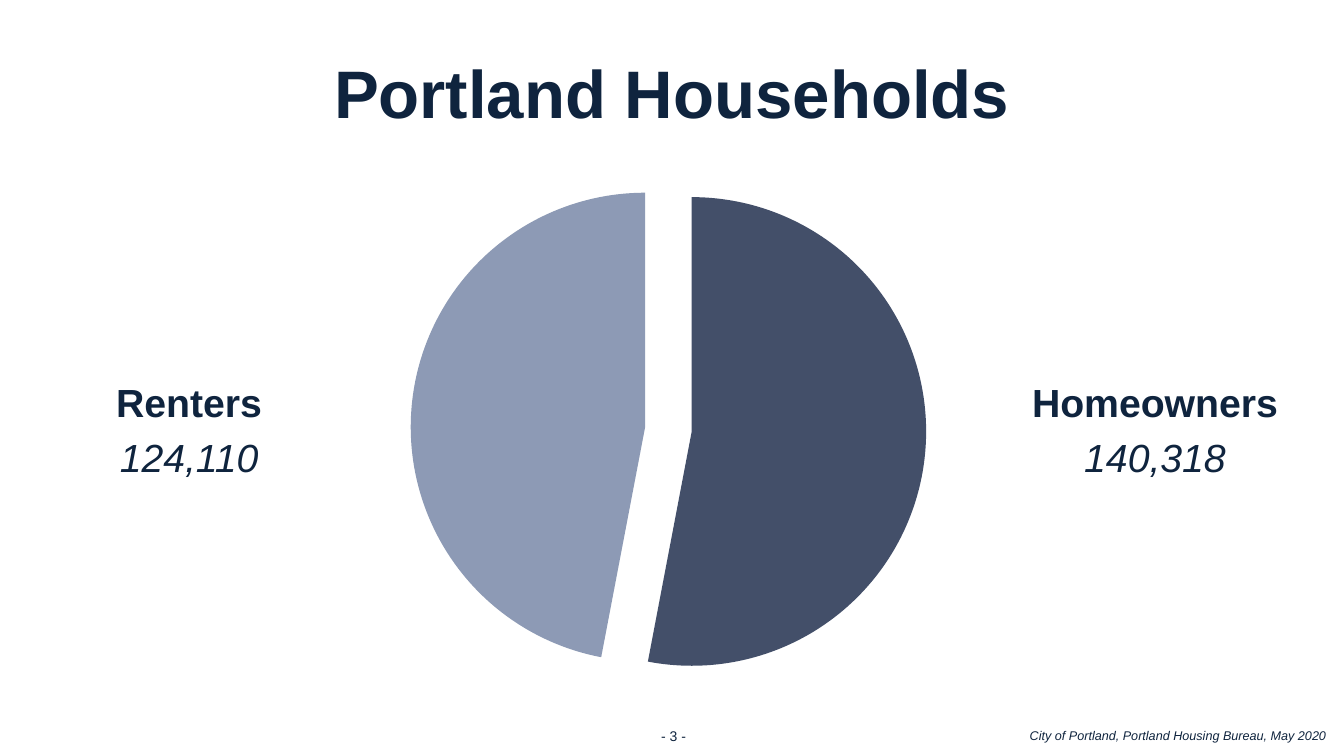
from lxml import etree
from pptx import Presentation
from pptx.chart.data import CategoryChartData
from pptx.dml.color import RGBColor
from pptx.enum import chart as ch, text as t
from pptx.oxml import parse_xml
from pptx.oxml.ns import nsdecls, qn
from pptx.util import Inches, Pt

NAVY = RGBColor(0x0F, 0x24, 0x3E)
SLATE = RGBColor(0x43, 0x4F, 0x69)
MIST = RGBColor(0x8D, 0x9A, 0xB5)
FONT = "Arial"

# Content
TITLE = "Portland Households"
SHARES = [("1", 53, SLATE), ("2", 47, MIST)]
GROUPS = [("Renters", "124,110", 0.42), ("Homeowners", "140,318", 10)]
PAGE = "- 3 -"
SOURCE = "City of Portland, Portland Housing Bureau, May 2020"

# Pie layout in inches
CHART_W, CHART_H = 8, 5
PIE_W = 4.65
EXPLOSION = 10

prs = Presentation()
prs.slide_width, prs.slide_height = Inches(13.33), Inches(7.5)
s = prs.slides.add_slide(prs.slide_layouts[5])


def write(sp, lines, size, align=t.PP_ALIGN.CENTER, styles=("",), after=0,
          inset=0, anchor=t.MSO_ANCHOR.TOP):
    """Fill a shape with one paragraph per line; styles hold b and i flags."""
    tf = sp.text_frame
    tf.word_wrap = True
    tf.auto_size = t.MSO_AUTO_SIZE.NONE
    tf.vertical_anchor = anchor
    tf.margin_left = tf.margin_right = Inches(inset)
    tf.margin_top = tf.margin_bottom = Inches(inset / 2)
    for i, (line, style) in enumerate(zip(lines, styles)):
        p = tf.add_paragraph() if i else tf.paragraphs[0]
        p.alignment = align
        p.space_after = Pt(after if i < len(lines) - 1 else 0)
        r = p.add_run()
        r.text = line
        f = r.font
        f.name, f.size = FONT, Pt(size)
        f.bold, f.italic = "b" in style, "i" in style
        f.color.rgb = NAVY


def box(x, y, w, h):
    return s.shapes.add_textbox(Inches(x), Inches(y), Inches(w), Inches(h))


# Title
title = s.shapes.title
title.left, title.top = Inches(0.75), Inches(0.5)
title.width, title.height = Inches(11.83), Inches(0.81)
write(title, [TITLE], 48, styles=("b",), anchor=t.MSO_ANCHOR.MIDDLE)

# Pie chart
data = CategoryChartData()
data.categories = [name for name, _, _ in SHARES]
data.add_series("Series 1", [value for _, value, _ in SHARES])
pie = s.shapes.add_chart(ch.XL_CHART_TYPE.PIE, Inches(2.67), Inches(1.76),
                         Inches(CHART_W), Inches(CHART_H), data).chart
pie.has_legend = pie.has_title = False
pie.font.name, pie.font.size, pie.font.bold = FONT, Pt(14), True
pie.plots[0].vary_by_categories = True
series = pie.plots[0].series[0]
for i, (_, _, color) in enumerate(SHARES):
    fmt = series.points[i].format
    fmt.fill.solid()
    fmt.fill.fore_color.rgb = color
    fmt.line.fill.background()

# Pull the slices apart
for d_pt in series._element.findall(qn("c:dPt")):
    explosion = etree.Element(qn("c:explosion"), val=str(EXPLOSION))
    d_pt.find(qn("c:spPr")).addprevious(explosion)

# Place the pie inside the chart frame
w, h = PIE_W / CHART_W, PIE_W / CHART_H
placement = {"x": (1 - w) / 2 - 0.005, "y": (1 - h) / 2, "w": w, "h": h}
area = pie._chartSpace.chart.plotArea
for old in area.findall(qn("c:layout")):
    area.remove(old)
area.insert(0, parse_xml(
    f'<c:layout {nsdecls("c")}><c:manualLayout><c:layoutTarget val="inner"/>'
    '<c:xMode val="edge"/><c:yMode val="edge"/>'
    + "".join(f'<c:{k} val="{v:.4f}"/>' for k, v in placement.items())
    + "</c:manualLayout></c:layout>"))

# Group labels beside the pie
for name, count, x in GROUPS:
    write(box(x, 3.75, 2.91, 1.03), [name, count], 28,
          styles=("b", "i"), after=6)

# Footer
write(box(6.42, 7.22, 0.52, 0.17), [PAGE], 10)
write(box(10, 7.17, 3.25, 0.25), [SOURCE], 9, align=t.PP_ALIGN.RIGHT,
      styles=("i",), inset=0.1)

prs.save("out.pptx")
